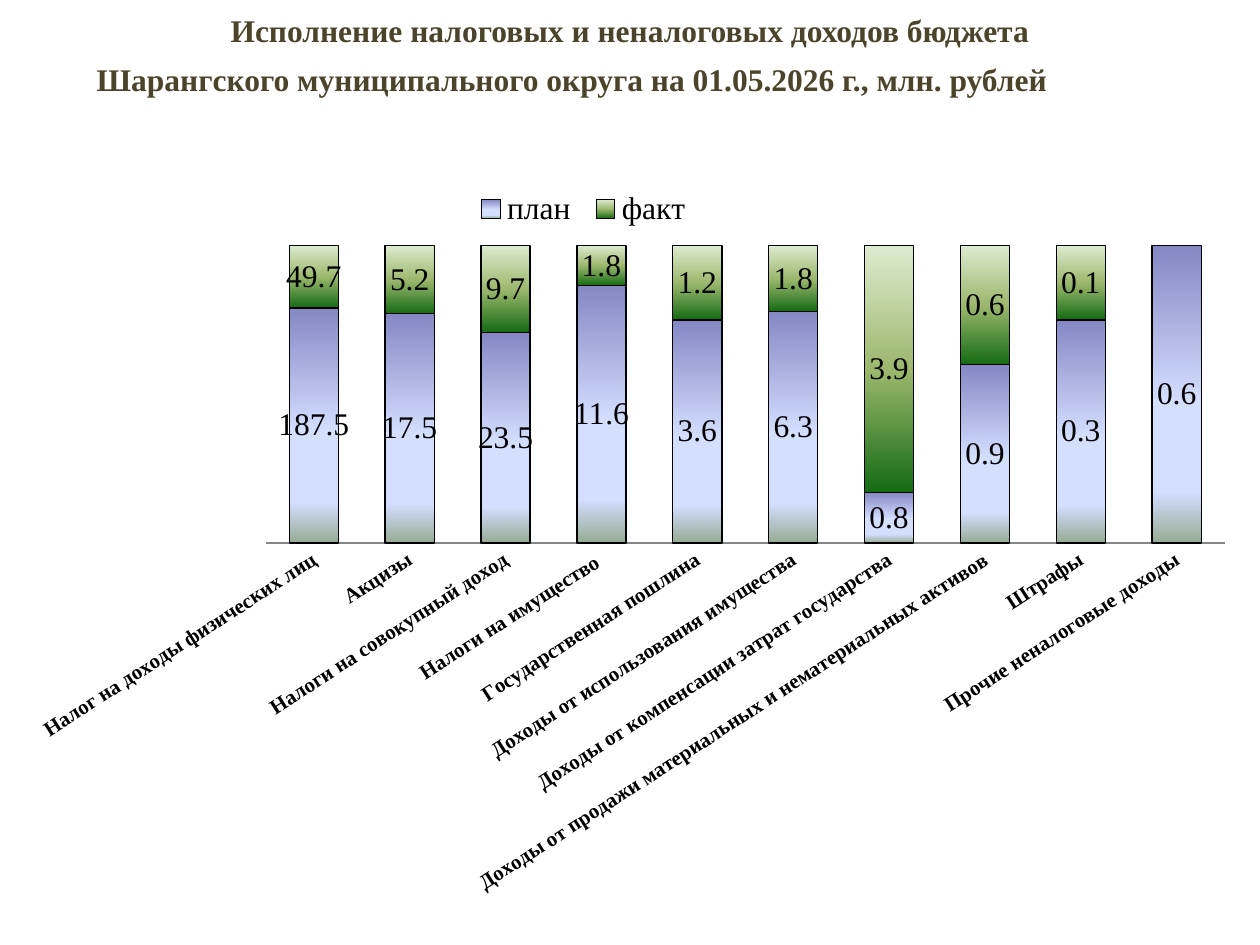
"""Budget revenue slide: plan and actual as 100% stacked columns."""
from lxml.etree import SubElement
from pptx import Presentation
from pptx.chart.data import CategoryChartData
from pptx.dml.color import RGBColor
from pptx.enum.chart import XL_CHART_TYPE, XL_LABEL_POSITION, XL_LEGEND_POSITION, XL_TICK_MARK
from pptx.enum.text import PP_ALIGN
from pptx.oxml.ns import qn
from pptx.util import Inches, Pt

FONT = "Times New Roman"
TITLE = [
    "Исполнение налоговых и неналоговых доходов бюджета",
    "Шарангского муниципального округа на 01.05.2026 г., млн. рублей",
]
REVENUES = [
    ("Налог на доходы физических лиц", 187.5, 49.7),
    ("Акцизы", 17.5, 5.2),
    ("Налоги на совокупный доход", 23.5, 9.7),
    ("Налоги на имущество ", 11.6, 1.8),
    ("Государственная пошлина", 3.6, 1.2),
    ("Доходы от использования имущества", 6.3, 1.8),
    ("Доходы от компенсации затрат государства", 0.8, 3.9),
    ("Доходы от продажи материальных и нематериальных активов", 0.9, 0.6),
    ("Штрафы", 0.3, 0.1),
    ("Прочие неналоговые доходы", 0.6, None),
]
GRADIENTS = {
    "план": [(0, "8488C4"), (53, "D4DEFF"), (83, "D4DEFF"), (100, "96AB94")],
    "факт": [(0, "DDEBCF"), (50, "9CB86E"), (100, "156B13")],
}
CHART_BOX = (0.12, 1.39, 9.8, 5.98)
PLOT_BOX = (2.11, 1.95, 7.61, 2.36)
LEGEND_BOX = (3.7, 1.45, 1.86, 0.42)
LABEL_ANGLE = -33


def rgb(color):
    return RGBColor.from_string(color)


def style_font(font, size, color="000000", bold=False):
    font.name, font.size, font.bold = FONT, Pt(size), bold
    font.color.rgb = rgb(color)


def place(part, index, box, inner=False):
    for old in part.findall(qn("c:layout")):
        part.remove(old)
    layout = part.makeelement(qn("c:layout"))
    part.insert(index, layout)
    manual = SubElement(layout, qn("c:manualLayout"))
    if inner:
        SubElement(manual, qn("c:layoutTarget"), val="inner")
    for mode in ("xMode", "yMode"):
        SubElement(manual, qn(f"c:{mode}"), val="edge")
    left, top, width, height = CHART_BOX
    x, y, w, h = box
    fractions = ((x - left) / width, (y - top) / height, w / width, h / height)
    for side, fraction in zip("xywh", fractions):
        SubElement(manual, qn(f"c:{side}"), val=f"{fraction:.4f}")


def fill_gradient(series, stops):
    series.format.fill.gradient()
    series.format.fill.gradient_angle = 270
    stop_list = series._element.find(".//" + qn("a:gsLst"))
    for old in list(stop_list):
        stop_list.remove(old)
    for percent, color in stops:
        stop = SubElement(stop_list, qn("a:gs"), pos=str(percent * 1000))
        SubElement(stop, qn("a:srgbClr"), val=color)


def add_title(slide):
    frame = slide.shapes.add_textbox(Inches(0.6), Inches(0.09), Inches(8.8), Inches(0.72)).text_frame
    frame.word_wrap = True
    frame.margin_left = frame.margin_right = frame.margin_top = frame.margin_bottom = 0
    first, second = frame.paragraphs[0], frame.add_paragraph()
    for paragraph, line in zip((first, second), TITLE):
        paragraph.alignment = PP_ALIGN.CENTER
        run = paragraph.add_run()
        run.text = line
        style_font(run.font, 18, "4A452A", True)
    second.space_before = Pt(6)
    second._p.get_or_add_pPr().set("marR", str(Inches(0.92)))


def add_revenue_chart(slide):
    names, plan, actual = zip(*REVENUES)
    revenue = CategoryChartData(number_format="0.0")
    revenue.categories = names
    for name, amounts in zip(GRADIENTS, (plan, actual)):
        revenue.add_series(name, amounts)
    chart = slide.shapes.add_chart(
        XL_CHART_TYPE.COLUMN_STACKED_100, *map(Inches, CHART_BOX), revenue
    ).chart
    chart.has_title = False
    style_font(chart.font, 18)

    chart.has_legend = True
    chart.legend.position = XL_LEGEND_POSITION.TOP
    chart.legend.include_in_layout = False
    style_font(chart.legend.font, 18)
    place(chart.legend._element, 1, LEGEND_BOX)
    place(chart._chartSpace.find(".//" + qn("c:plotArea")), 0, PLOT_BOX, inner=True)

    shares = chart.value_axis
    shares.visible = shares.has_major_gridlines = False
    shares.minimum_scale, shares.maximum_scale, shares.major_unit = 0, 1, 0.1
    sources = chart.category_axis
    sources.major_tick_mark = XL_TICK_MARK.NONE
    sources.format.line.color.rgb = rgb("868686")
    style_font(sources.tick_labels.font, 12, bold=True)
    label_body = sources._element.find(qn("c:txPr")).find(qn("a:bodyPr"))
    label_body.set("rot", str(LABEL_ANGLE * 60000))

    plot = chart.plots[0]
    plot.gap_width, plot.overlap, plot.vary_by_categories = 95, 100, False
    for series in plot.series:
        fill_gradient(series, GRADIENTS[series.name])
        series.format.line.color.rgb = rgb("000000")
        series.format.line.width = Pt(0.75)
        labels = series.data_labels
        labels.show_value = True
        labels.number_format, labels.number_format_is_linked = "0.0", False
        labels.position = XL_LABEL_POSITION.CENTER
        style_font(labels.font, 18)


def main():
    deck = Presentation()
    deck.slide_width, deck.slide_height = Inches(10), Inches(7.5)
    slide = deck.slides.add_slide(deck.slide_layouts[6])
    add_title(slide)
    add_revenue_chart(slide)
    deck.save("out.pptx")


if __name__ == "__main__":
    main()
